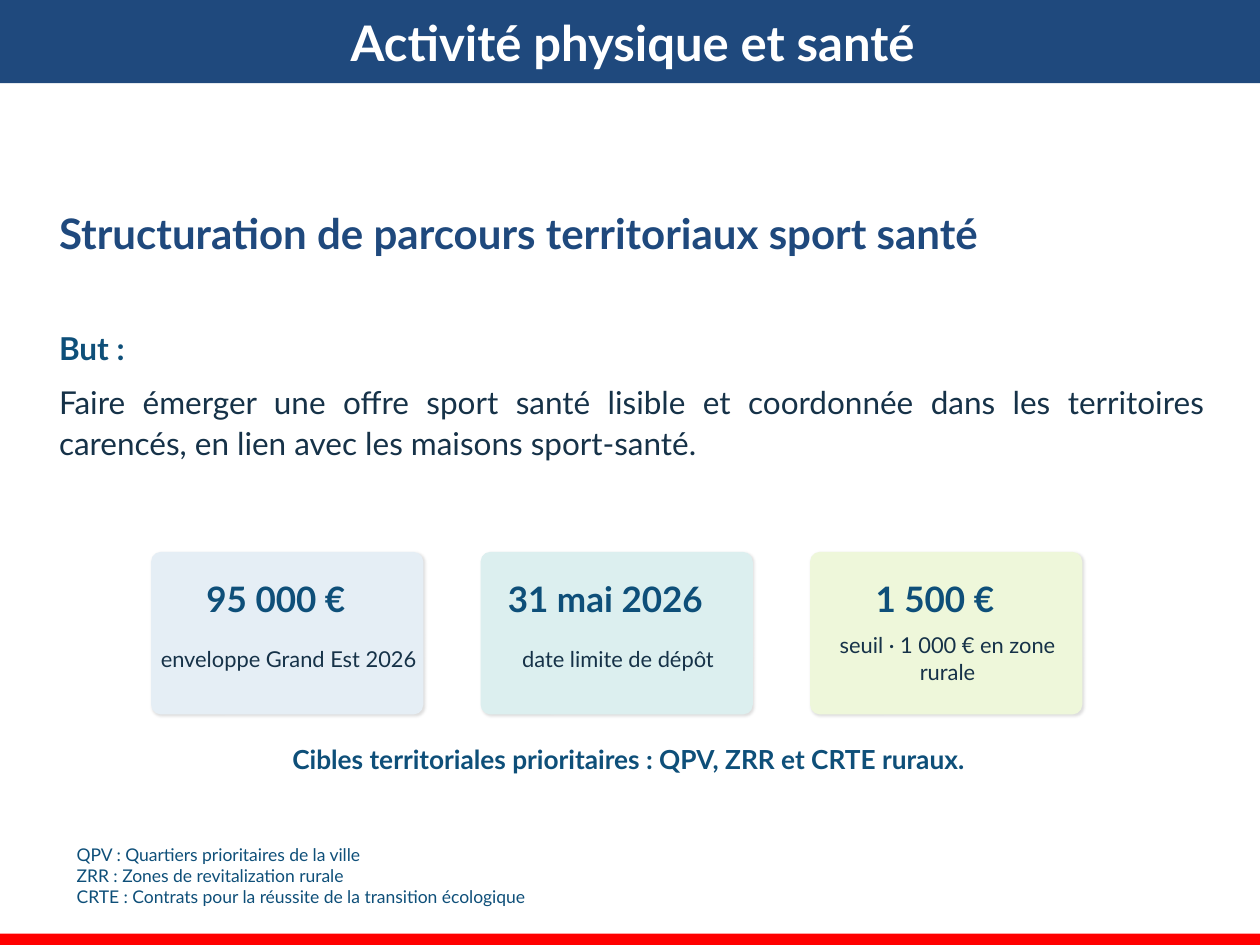
from dataclasses import dataclass

import lxml.etree
import pptx
import pptx.dml.color
import pptx.enum.shapes
import pptx.enum.text
import pptx.oxml.ns
import pptx.util

ALIGN = pptx.enum.text.PP_ALIGN
ANCHOR = pptx.enum.text.MSO_ANCHOR
FIT = pptx.enum.text.MSO_AUTO_SIZE
SHAPE = pptx.enum.shapes.MSO_SHAPE

COLORS = {
    "banner": "1F497D", "white": "FFFFFF", "red": "FF0000", "accent": "0E4F79",
    "body": "163248", "blue": "E5EEF5", "teal": "DCEFEF", "green": "EEF7DA",
}
FONT = "Lato"
COLUMNS, ROWS = 100, 75
CARD_LEFT, CARD_TOP, CARD_PITCH = 12, 43.8, 26.15


@dataclass(frozen=True)
class Area:
    column: float
    row: float
    columns: float
    rows: float

    def shifted(self, columns: float, rows: float) -> "Area":
        return Area(self.column + columns, self.row + rows, self.columns, self.rows)


@dataclass(frozen=True)
class Card:
    figure: str
    label: str
    color: str


CARD = Area(0, 0, 21.6, 12.9)
FIGURE = Area(-0.7, 1.7, 21.2, 4)
LABEL = Area(0.3, 6.8, 21.2, 3.3)
CARDS = [
    Card("95 000 €", "enveloppe Grand Est 2026", "blue"),
    Card("31 mai 2026", "date limite de dépôt", "teal"),
    Card("1 500 €", "seuil · 1 000 € en zone rurale", "green"),
]
GLOSSARY = [
    "QPV : Quartiers prioritaires de la ville",
    "ZRR : Zones de revitalization rurale",
    "CRTE : Contrats pour la réussite de la transition écologique",
]

deck = pptx.Presentation()
deck.slide_width = pptx.util.Inches(10)
deck.slide_height = pptx.util.Inches(7.5)


def place(area: Area) -> tuple[int, int, int, int]:
    across, down = deck.slide_width / COLUMNS, deck.slide_height / ROWS
    return (round(area.column * across), round(area.row * down),
            round(area.columns * across), round(area.rows * down))


def rgb(name: str) -> pptx.dml.color.RGBColor:
    return pptx.dml.color.RGBColor.from_string(COLORS[name])


def write(box, text: str, *, size: float, color: str = "accent", bold: bool = False,
          align=ALIGN.LEFT, spacing: float = 1.0, after: float = 0) -> None:
    frame = box.text_frame
    para = frame.paragraphs[0] if not frame.text else frame.add_paragraph()
    para.alignment = align
    para.line_spacing = spacing
    para.space_before = pptx.util.Pt(0)
    para.space_after = pptx.util.Pt(after)
    span = para.add_run()
    span.text = text
    span.font.name = FONT
    span.font.size = pptx.util.Pt(size)
    span.font.bold = bold
    span.font.color.rgb = rgb(color)


def add_box(shapes, area: Area, *, tight: bool = False):
    box = shapes.add_textbox(*place(area))
    frame = box.text_frame
    frame.word_wrap = True
    if tight:
        frame.margin_left = frame.margin_right = 0
        frame.margin_top = frame.margin_bottom = 0
        frame.vertical_anchor = ANCHOR.MIDDLE
    else:
        frame.auto_size = FIT.SHAPE_TO_FIT_TEXT
    return box


def add_panel(shapes, kind, area: Area, color: str):
    panel = shapes.add_shape(kind, *place(area))
    panel.shadow.inherit = False
    panel.fill.solid()
    panel.fill.fore_color.rgb = rgb(color)
    panel.line.fill.background()
    return panel


def add_soft_shadow(panel) -> None:
    name = pptx.oxml.ns.qn
    effects = panel.element.spPr.find(name("a:effectLst"))
    shadow = lxml.etree.SubElement(
        effects, name("a:outerShdw"), blurRad=str(pptx.util.Pt(1.5)),
        dist=str(pptx.util.Pt(1)), dir=str(45 * 60000), algn="tl", rotWithShape="0")
    tint = lxml.etree.SubElement(shadow, name("a:srgbClr"), val="000000")
    lxml.etree.SubElement(tint, name("a:alpha"), val="12000")


def add_card(page, card: Card, index: int) -> None:
    shapes = page.shapes.add_group_shape().shapes
    left = CARD_LEFT + index * CARD_PITCH
    panel = add_panel(shapes, SHAPE.ROUNDED_RECTANGLE, CARD.shifted(left, CARD_TOP), card.color)
    panel.adjustments[0] = 0.06
    add_soft_shadow(panel)
    figure = add_box(shapes, FIGURE.shifted(left, CARD_TOP), tight=True)
    write(figure, card.figure, size=20, bold=True, align=ALIGN.CENTER)
    label = add_box(shapes, LABEL.shifted(left, CARD_TOP), tight=True)
    write(label, card.label, size=12.5, color="body", align=ALIGN.CENTER)


def add_title(page) -> None:
    title = page.shapes.title
    title.left, title.top, title.width, title.height = place(Area(0, 0, 100.4, 6.6))
    title.fill.solid()
    title.fill.fore_color.rgb = rgb("banner")
    title.text_frame.auto_size = FIT.NONE
    title.text_frame.vertical_anchor = ANCHOR.MIDDLE
    write(title, "Activité physique et santé", size=28, color="white", bold=True,
          align=ALIGN.CENTER)


def main() -> None:
    page = deck.slides.add_slide(deck.slide_layouts[5])
    add_title(page)
    add_panel(page.shapes, SHAPE.RECTANGLE, Area(0, 74.1, 100, 1), "red")

    purpose = add_box(page.shapes, Area(3.7, 15.7, 92.9, 25.9))
    flow = {"align": ALIGN.JUSTIFY, "spacing": 1.07}
    write(purpose, "Structuration de parcours territoriaux sport santé",
          size=24, color="banner", bold=True, after=39, **flow)
    write(purpose, "But :", size=18, bold=True, after=8, **flow)
    write(purpose, "Faire émerger une offre sport santé lisible et coordonnée dans les "
          "territoires carencés, en lien avec les maisons sport-santé.",
          size=18, color="body", after=8, **flow)

    for index, card in enumerate(CARDS):
        add_card(page, card, index)

    targets = add_box(page.shapes, Area(23.2, 56.4, 59.9, 7.7), tight=True)
    write(targets, "Cibles territoriales prioritaires : QPV, ZRR et CRTE ruraux.",
          size=15, bold=True)
    glossary = add_box(page.shapes, Area(5.1, 66.5, 50.2, 6.1))
    for entry in GLOSSARY:
        write(glossary, entry, size=10)

    deck.save("out.pptx")


if __name__ == "__main__":
    main()
